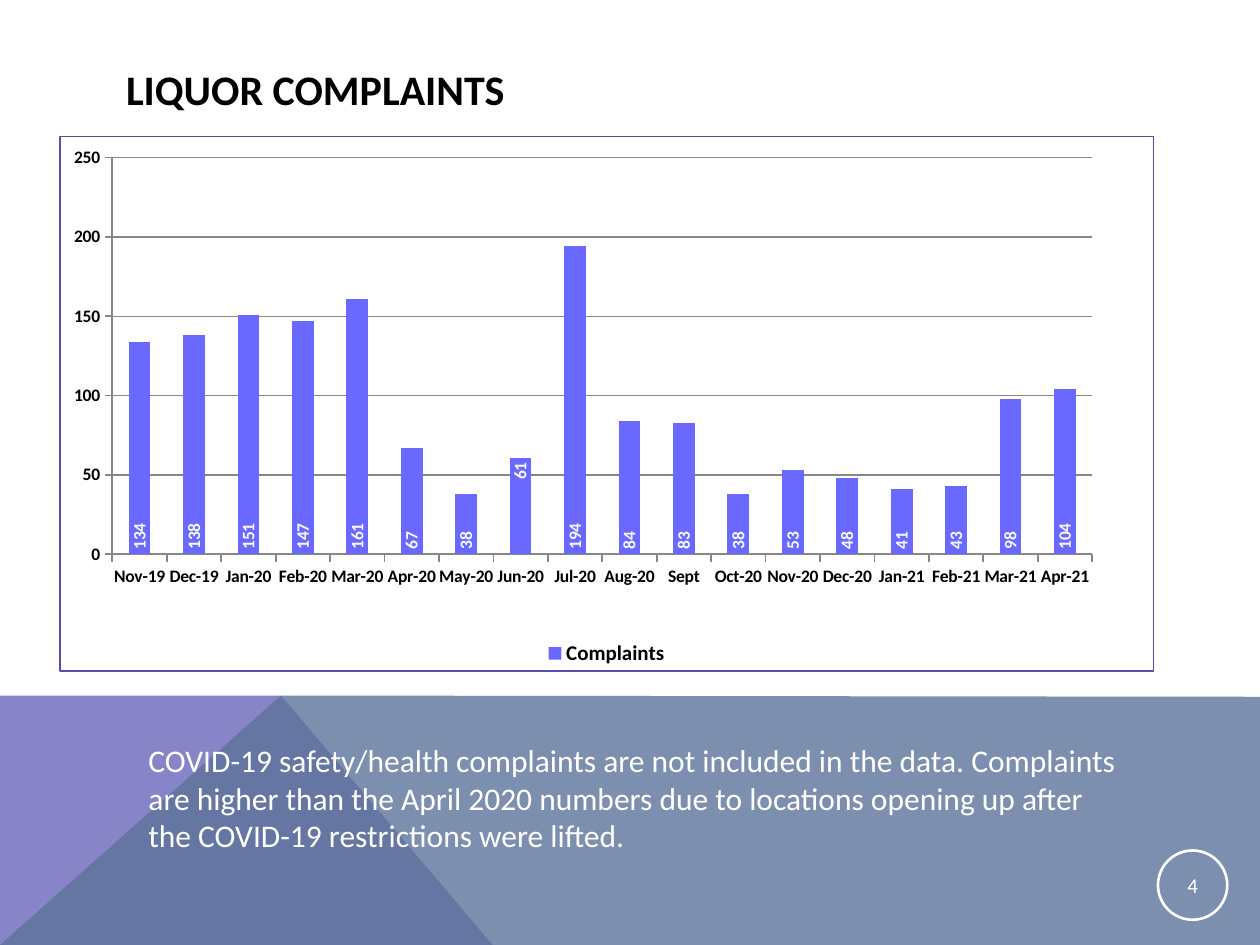
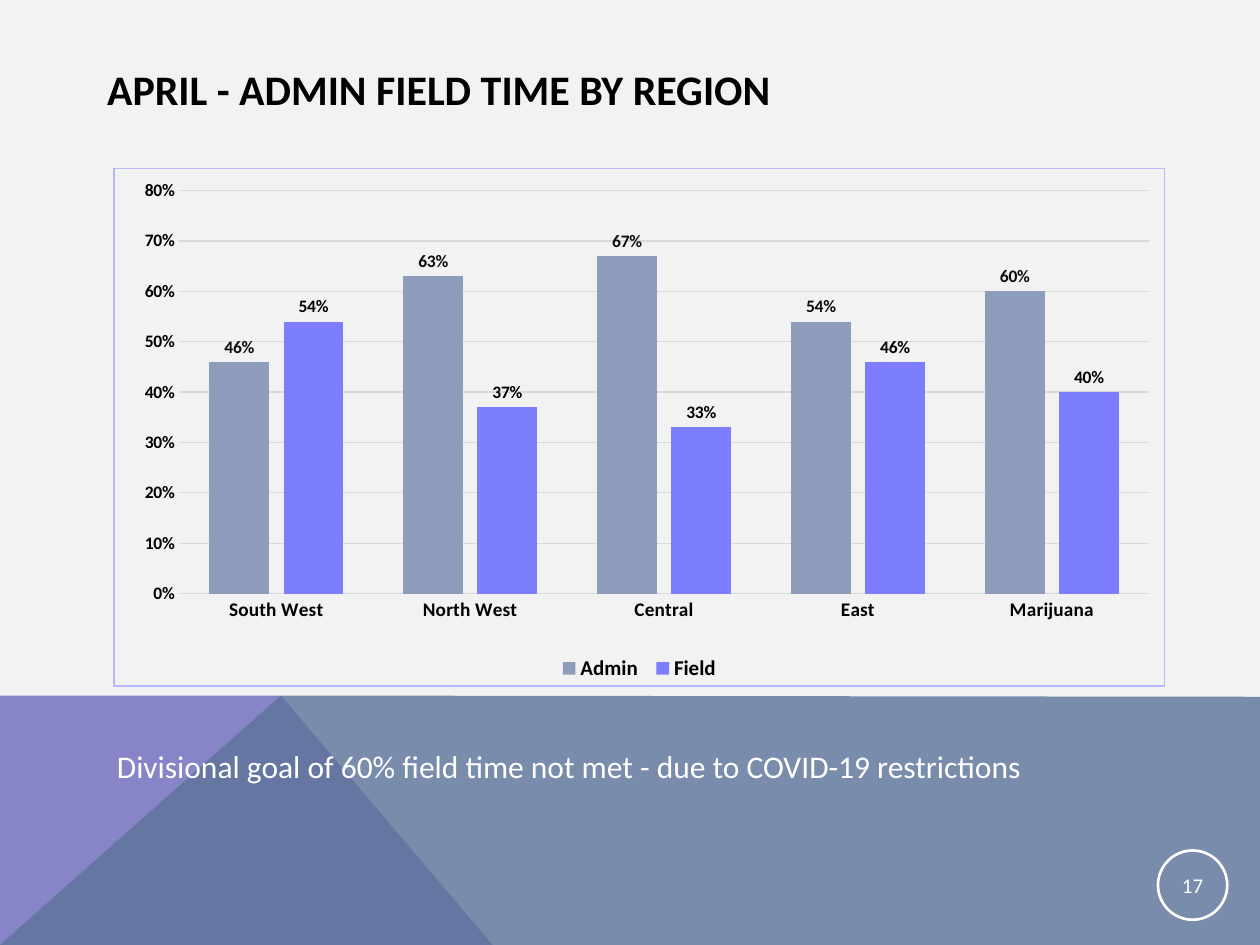
"""Build two slides of an enforcement report, each a column chart above a note band."""
from dataclasses import dataclass

import pptx
import pptx.chart.data
import pptx.dml.color
import pptx.enum.chart
import pptx.enum.shapes
import pptx.enum.text
import pptx.oxml
import pptx.oxml.ns
import pptx.util
from pptx.util import Inches

FONT = "Calibri"
BLACK, WHITE, LILAC, SLATE = "000000", "FFFFFF", "8784C7", "5D739A"
Box = tuple[float, float, float, float]
Position = pptx.enum.chart.XL_LABEL_POSITION


@dataclass
class Series:
    name: str
    values: list[float]
    color: str
    label_color: str


@dataclass
class ColumnChart:
    box: Box
    plot_area: Box
    categories: list[str]
    series: list[Series]
    border: str
    border_width: float
    grid: str
    maximum: float
    step: float
    gap: int
    overlap: int = 0
    number_format: str = "General"
    category_size: int = 10
    axis_ticks: bool = False
    label_position: Position = Position.OUTSIDE_END
    vertical_labels: bool = False
    raised_label: int | None = None


@dataclass
class ReportSlide:
    title: str
    title_box: Box
    background: str
    number: int
    note: str
    note_box: Box
    chart: ColumnChart


REPORT = [
    ReportSlide(
        "LIQUOR COMPLAINTS", (0.9, 0.4, 8.22, 0.6), WHITE, 4,
        "COVID-19 safety/health complaints are not included in the data. Complaints are higher "
        "than the April 2020 numbers due to locations opening up after the COVID-19 "
        "restrictions were lifted.",
        (1.08, 5.83, 7.9, 1.31),
        ColumnChart(
            (0.47, 1.08, 8.69, 4.25), (0.048, 0.039, 0.896, 0.743),
            ["Nov-19", "Dec-19", "Jan-20", "Feb-20", "Mar-20", "Apr-20", "May-20", "Jun-20",
             "Jul-20", "Aug-20", "Sept", "Oct-20", "Nov-20", "Dec-20", "Jan-21", "Feb-21",
             "Mar-21", "Apr-21"],
            [Series("Complaints",
                    [134, 138, 151, 147, 161, 67, 38, 61, 194, 84, 83, 38, 53, 48, 41, 43, 98, 104],
                    "6969FF", "F8F8F8")],
            border="524EAB", border_width=0.75, grid="868686", maximum=250, step=50, gap=150,
            axis_ticks=True, label_position=Position.INSIDE_BASE, vertical_labels=True,
            raised_label=7)),
    ReportSlide(
        "APRIL - ADMIN FIELD TIME BY REGION", (0.75, 0.4, 8.44, 0.6), "F2F2F2", 17,
        "Divisional goal of 60% field time not met - due to COVID-19 restrictions",
        (0.83, 5.88, 8.67, 0.4),
        ColumnChart(
            (0.9, 1.33, 8.35, 4.12), (0.062, 0.043, 0.923, 0.779),
            ["South West", "North West", "Central", "East", "Marijuana"],
            [Series("Admin ", [0.46, 0.63, 0.67, 0.54, 0.6], "8C9CBA", "0D0D0D"),
             Series("Field", [0.54, 0.37, 0.33, 0.46, 0.4], "7D7DFF", BLACK)],
            border="B7B7FF", border_width=1, grid="D9D9D9", maximum=0.8, step=0.1, gap=100,
            overlap=-24, number_format="0%", category_size=11)),
]


def rgb(color: str) -> pptx.dml.color.RGBColor:
    """Turn a hex string into a colour."""
    return pptx.dml.color.RGBColor.from_string(color)


def inches(box: Box) -> list[pptx.util.Length]:
    """Turn a box into lengths."""
    return [Inches(v) for v in box]


def set_fill(target, color: str) -> None:
    """Give a shape, series or background a solid fill."""
    target.fill.solid()
    target.fill.fore_color.rgb = rgb(color)


def set_font(font, size: float, color: str, bold: bool = False) -> None:
    """Set the face, size, colour and weight of a font."""
    font.name, font.size, font.bold = FONT, pptx.util.Pt(size), bold
    font.color.rgb = rgb(color)


def set_line(line, color: str, width: float) -> None:
    """Set the colour and width of a line."""
    line.color.rgb = rgb(color)
    line.width = pptx.util.Pt(width)


def add_band(slide, points: list[tuple[float, float]], color: str, alpha: int = 100) -> None:
    """Draw one polygon of the bottom band."""
    start, *rest = [(Inches(x), Inches(y)) for x, y in points]
    builder = slide.shapes.build_freeform(*start, scale=1.0)
    builder.add_line_segments(rest, close=True)
    sp = builder.convert_to_shape()
    sp.shadow.inherit = False
    sp.line.fill.background()
    set_fill(sp, color)
    if alpha < 100:
        clr = sp._element.xpath("./p:spPr/a:solidFill/a:srgbClr")[0]
        ns = pptx.oxml.ns.nsdecls("a")
        clr.append(pptx.oxml.parse_xml(f'<a:alpha {ns} val="{alpha * 1000}"/>'))


def add_title(slide, text: str, box: Box) -> None:
    """Place and format the title placeholder."""
    sp = slide.shapes.title
    sp.left, sp.top, sp.width, sp.height = inches(box)
    tf = sp.text_frame
    tf.text = text
    tf.auto_size = pptx.enum.text.MSO_AUTO_SIZE.NONE
    tf.vertical_anchor = pptx.enum.text.MSO_ANCHOR.MIDDLE
    p = tf.paragraphs[0]
    p.alignment = pptx.enum.text.PP_ALIGN.LEFT
    set_font(p.font, 24, BLACK, True)


def add_page_number(slide, number: int) -> None:
    """Draw the ringed page number."""
    sp = slide.shapes.add_shape(pptx.enum.shapes.MSO_SHAPE.OVAL, *inches((9.19, 6.75, 0.55, 0.55)))
    sp.shadow.inherit = False
    sp.fill.background()
    set_line(sp.line, WHITE, 1.5)
    tf = sp.text_frame
    tf.margin_left = tf.margin_top = tf.margin_right = tf.margin_bottom = Inches(0.01)
    tf.vertical_anchor = pptx.enum.text.MSO_ANCHOR.MIDDLE
    p = tf.paragraphs[0]
    p.text = str(number)
    p.alignment = pptx.enum.text.PP_ALIGN.CENTER
    set_font(p.font, 12, WHITE)


def add_note(slide, text: str, box: Box) -> None:
    """Write the note on the band."""
    tf = slide.shapes.add_textbox(*inches(box)).text_frame
    tf.word_wrap = True
    p = tf.paragraphs[0]
    p.text = text
    set_font(p.font, 18, WHITE)


def frame_chart(chart, design: ColumnChart) -> None:
    """Fix the inner plot area and outline the chart."""
    ns = pptx.oxml.ns.nsdecls("c", "a")
    x, y, w, h = design.plot_area
    area = chart._chartSpace.xpath("./c:chart/c:plotArea")[0]
    for old in area.xpath("./c:layout"):
        area.remove(old)
    area.insert(0, pptx.oxml.parse_xml(
        f'<c:layout {ns}><c:manualLayout><c:layoutTarget val="inner"/>'
        f'<c:xMode val="edge"/><c:yMode val="edge"/><c:x val="{x}"/><c:y val="{y}"/>'
        f'<c:w val="{w}"/><c:h val="{h}"/></c:manualLayout></c:layout>'))
    chart._chartSpace.xpath("./c:chart")[0].addnext(pptx.oxml.parse_xml(
        f'<c:spPr {ns}><a:noFill/><a:ln w="{int(pptx.util.Pt(design.border_width))}"><a:solidFill>'
        f'<a:srgbClr val="{design.border}"/></a:solidFill></a:ln></c:spPr>'))


def format_axes(chart, design: ColumnChart) -> None:
    """Format both axes and the gridlines."""
    marks = pptx.enum.chart.XL_TICK_MARK
    sizes = ((chart.category_axis, design.category_size), (chart.value_axis, 10))
    for axis, size in sizes:
        axis.major_tick_mark = marks.OUTSIDE if design.axis_ticks else marks.NONE
        axis.minor_tick_mark = marks.NONE
        set_font(axis.tick_labels.font, size, BLACK, True)
        set_line(axis.format.line, design.grid, 1)
    axis = chart.value_axis
    axis.minimum_scale, axis.maximum_scale, axis.major_unit = 0, design.maximum, design.step
    axis.tick_labels.number_format = design.number_format
    axis.tick_labels.number_format_is_linked = False
    set_line(axis.major_gridlines.format.line, design.grid, 0.75)
    if not design.axis_ticks:
        axis.format.line.fill.background()


def format_series(series, look: Series, design: ColumnChart) -> None:
    """Colour a series and label its columns."""
    set_fill(series.format, look.color)
    series.invert_if_negative = False
    labels = series.data_labels
    labels.show_value = True
    labels.number_format, labels.number_format_is_linked = design.number_format, False
    labels.position = design.label_position
    set_font(labels.font, 10, look.label_color, True)
    if design.raised_label is not None:
        label = series.points[design.raised_label].data_label
        set_font(label.font, 10, look.label_color, True)
        label.position = Position.INSIDE_END
    if design.vertical_labels:
        for body in series._element.xpath(".//c:txPr/a:bodyPr"):
            body.set("rot", "-5400000")
            body.set("vert", "horz")


def add_column_chart(slide, design: ColumnChart) -> None:
    """Add a clustered column chart."""
    data = pptx.chart.data.CategoryChartData(number_format=design.number_format)
    data.categories = design.categories
    for look in design.series:
        data.add_series(look.name, look.values)
    kind = pptx.enum.chart.XL_CHART_TYPE.COLUMN_CLUSTERED
    chart = slide.shapes.add_chart(kind, *inches(design.box), data).chart
    chart.has_title = False
    set_font(chart.font, 10, BLACK)
    chart.has_legend = True
    chart.legend.position = pptx.enum.chart.XL_LEGEND_POSITION.BOTTOM
    chart.legend.include_in_layout = False
    set_font(chart.legend.font, 12, BLACK, True)
    plot = chart.plots[0]
    plot.vary_by_categories = False
    plot.gap_width, plot.overlap = design.gap, design.overlap
    format_axes(chart, design)
    for series, look in zip(plot.series, design.series):
        format_series(series, look, design)
    frame_chart(chart, design)


def add_report_slide(prs, page: ReportSlide) -> None:
    """Build one whole slide."""
    slide = prs.slides.add_slide(prs.slide_layouts[5])
    set_fill(slide.background, page.background)
    add_band(slide, [(0, 7.5), (0, 5.52), (2.23, 5.52), (3.91, 7.5)], LILAC)
    add_band(slide, [(0, 7.5), (2.23, 5.52), (10, 5.53), (10, 7.5)], SLATE, 80)
    add_title(slide, page.title, page.title_box)
    add_page_number(slide, page.number)
    add_column_chart(slide, page.chart)
    add_note(slide, page.note, page.note_box)


def main() -> None:
    """Build and save the presentation."""
    prs = pptx.Presentation()
    prs.slide_width, prs.slide_height = Inches(10), Inches(7.5)
    for page in REPORT:
        add_report_slide(prs, page)
    prs.save("out.pptx")


if __name__ == "__main__":
    main()
